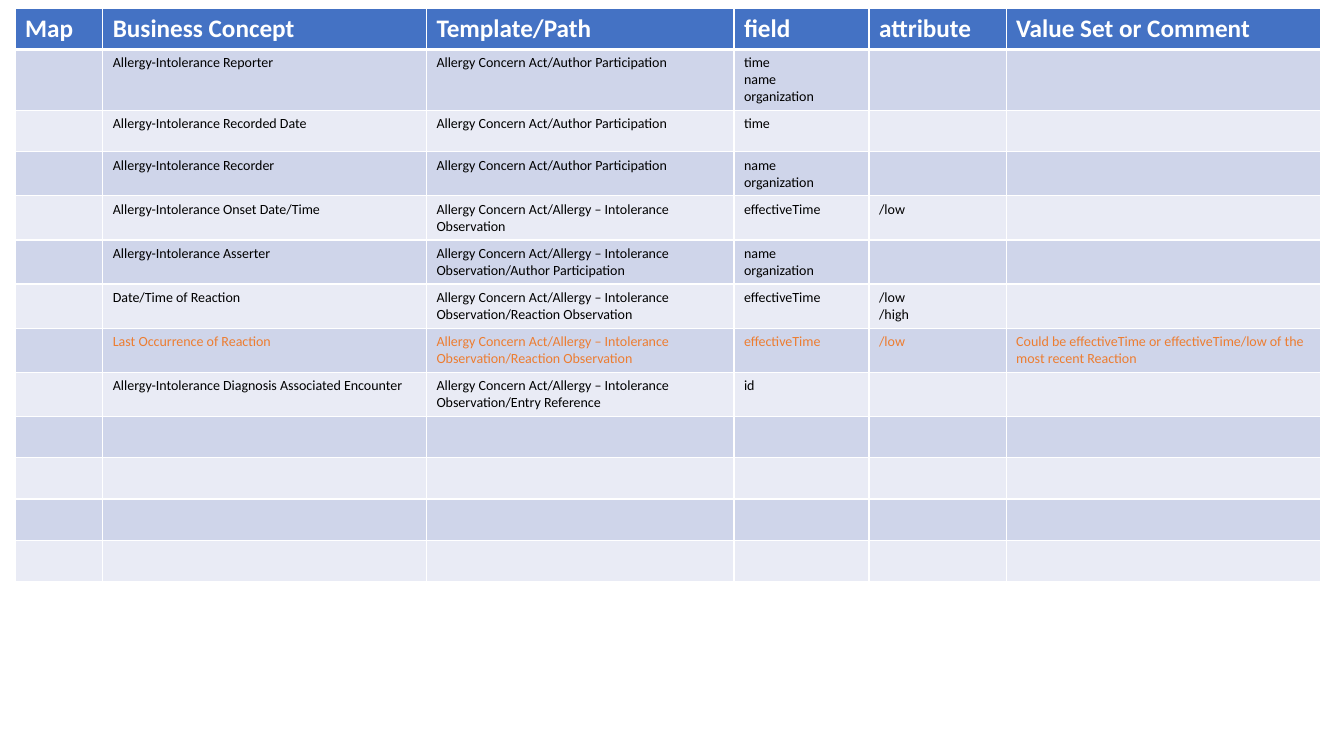
from lxml.etree import SubElement
from pptx import Presentation
from pptx.dml.color import RGBColor
from pptx.oxml.ns import qn
from pptx.util import Inches, Pt

WHITE = RGBColor(0xFF, 0xFF, 0xFF)
BLACK = RGBColor(0x00, 0x00, 0x00)
BLUE = RGBColor(0x44, 0x72, 0xC4)
ORANGE = RGBColor(0xED, 0x7D, 0x31)
BANDS = (RGBColor(0xE9, 0xEB, 0xF5), RGBColor(0xCF, 0xD5, 0xEA))

FONT = "Calibri"
COLUMN_WIDTHS = (0.87, 3.21, 3.05, 1.34, 1.36, 3.12)
ROW_HEIGHT = 0.41
ROW_COUNT = 13
HIGHLIGHTED_ROW = 7

ACT = "Allergy Concern Act/"
AUTHOR = ACT + "Author Participation"
OBSERVATION = ACT + "Allergy – Intolerance Observation"
REACTION = OBSERVATION + "/Reaction Observation"

HEADER = ("Map", "Business Concept", "Template/Path", "field", "attribute",
          "Value Set or Comment")
MAPPINGS = (
    ("", "Allergy-Intolerance Reporter", AUTHOR, "time\nname\norganization"),
    ("", "Allergy-Intolerance Recorded Date", AUTHOR, "time"),
    ("", "Allergy-Intolerance Recorder", AUTHOR, "name\norganization"),
    ("", "Allergy-Intolerance Onset Date/Time", OBSERVATION, "effectiveTime", "/low"),
    ("", "Allergy-Intolerance Asserter", OBSERVATION + "/Author Participation",
     "name\norganization"),
    ("", "Date/Time of Reaction", REACTION, "effectiveTime", "/low\n/high"),
    ("", "Last Occurrence of Reaction", REACTION, "effectiveTime", "/low",
     "Could be effectiveTime or effectiveTime/low of the most recent Reaction"),
    ("", "Allergy-Intolerance Diagnosis Associated Encounter",
     OBSERVATION + "/Entry Reference", "id"),
)


def set_borders(cell, top, bottom):
    """Draw white borders; top and bottom are widths in points."""
    properties = cell._tc.get_or_add_tcPr()
    for tag, width in (("a:lnL", 1), ("a:lnR", 1), ("a:lnT", top), ("a:lnB", bottom)):
        line = SubElement(properties, qn(tag), w=str(Pt(width)))
        fill = SubElement(line, qn("a:solidFill"))
        SubElement(fill, qn("a:srgbClr"), val=str(WHITE))


def write_cell(cell, text, size, color, bold):
    cell.text = text
    for paragraph in cell.text_frame.paragraphs:
        for run in paragraph.runs:
            run.font.name = FONT
            run.font.size = Pt(size)
            run.font.bold = bold
            run.font.color.rgb = color


def format_cell(cell, row):
    set_borders(cell, top=3 if row == 1 else 1, bottom=3 if row == 0 else 1)
    cell.fill.solid()
    cell.fill.fore_color.rgb = BLUE if row == 0 else BANDS[row % 2]


def add_mapping_table(slide):
    table = slide.shapes.add_table(
        ROW_COUNT, len(COLUMN_WIDTHS), Inches(0.15), Inches(0.08),
        Inches(sum(COLUMN_WIDTHS)), Inches(ROW_HEIGHT * ROW_COUNT)).table
    for column, width in zip(table.columns, COLUMN_WIDTHS):
        column.width = Inches(width)
    for row_index, row in enumerate(table.rows):
        row.height = Inches(ROW_HEIGHT)
        for cell in row.cells:
            format_cell(cell, row_index)

    for cell, text in zip(table.rows[0].cells, HEADER):
        write_cell(cell, text, 18, WHITE, True)
    for row_index, mapping in enumerate(MAPPINGS, start=1):
        color = ORANGE if row_index == HIGHLIGHTED_ROW else BLACK
        for cell, text in zip(table.rows[row_index].cells, mapping):
            write_cell(cell, text, 10, color, False)


def main():
    presentation = Presentation()
    presentation.slide_width = Inches(13.33)
    presentation.slide_height = Inches(7.5)
    blank_layout = presentation.slide_layouts[6]
    slide = presentation.slides.add_slide(blank_layout)
    add_mapping_table(slide)
    presentation.save("out.pptx")


if __name__ == "__main__":
    main()
